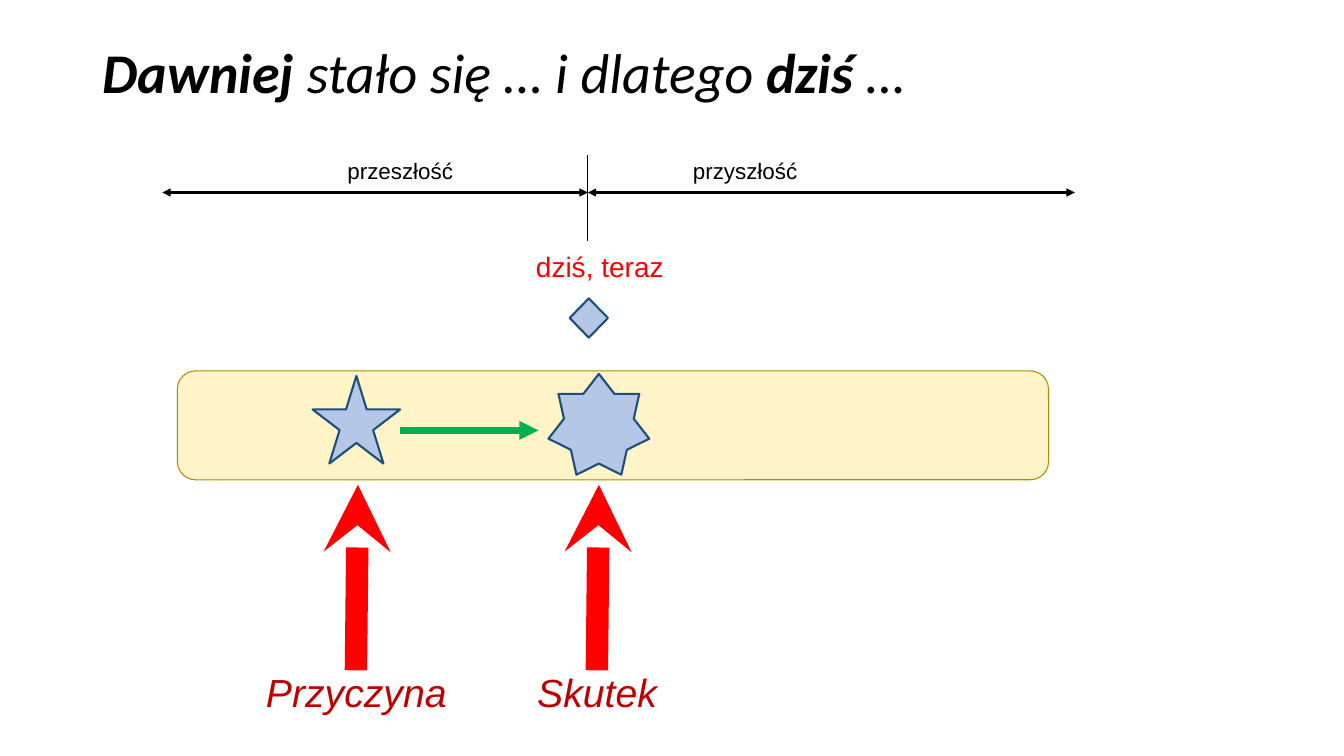
from dataclasses import dataclass

import lxml.etree
import pptx
import pptx.dml.color
import pptx.enum.shapes
import pptx.enum.text
import pptx.oxml.ns
import pptx.util

Inches = pptx.util.Inches
Pt = pptx.util.Pt
Kind = pptx.enum.shapes.MSO_SHAPE
Align = pptx.enum.text.PP_ALIGN
Anchor = pptx.enum.text.MSO_ANCHOR


@dataclass(frozen=True)
class Theme:
    black: str = "000000"
    red: str = "FF0000"
    dark_red: str = "C00000"
    green: str = "00B050"
    band_fill: str = "FFF4C7"
    band_line: str = "AD8B00"
    event_fill: str = "B4C7E7"
    event_line: str = "1F4E79"
    title_font: str = "Calibri"
    label_font: str = "Arial"
    title_size: int = 40
    role_size: int = 28
    now_size: int = 20
    period_size: int = 16


THEME = Theme()


@dataclass(frozen=True)
class Box:
    left: float
    top: float
    width: float
    height: float

    def lengths(self) -> tuple:
        return tuple(map(Inches, (self.left, self.top, self.width, self.height)))


@dataclass(frozen=True)
class Line:
    start: tuple[float, float]
    end: tuple[float, float]
    color: str
    width: float
    head: str = ""
    tail: str = ""


@dataclass(frozen=True)
class Figure:
    kind: Kind
    box: Box
    fill: str = THEME.event_fill
    line: str = THEME.event_line
    line_width: float = 1.5


@dataclass(frozen=True)
class Label:
    text: str
    box: Box
    size: int
    color: str
    italic: bool = False
    centered: bool = True
    inset: float = 0.03


NOW_X = 5.83
AXIS_Y = 1.91

FIGURES = [
    Figure(Kind.ROUNDED_RECTANGLE, Box(1.76, 3.68, 8.64, 1.08),
           THEME.band_fill, THEME.band_line, 0.75),
    Figure(Kind.STAR_5_POINT, Box(3.1, 3.73, 0.87, 0.87)),
    Figure(Kind.STAR_7_POINT, Box(5.44, 3.71, 1, 1)),
    Figure(Kind.DIAMOND, Box(5.65, 2.96, 0.38, 0.39)),
]

LINES = [
    Line((3.97, 4.27), (5.34, 4.27), THEME.green, 4.5, tail="triangle"),
    *(Line((x, 6.65), (x + 0.02, 4.81), THEME.red, 16, tail="stealth")
      for x in (3.53, 5.92)),
    *(Line((start, AXIS_Y), (end, AXIS_Y), THEME.black, 1.5, "triangle", "triangle")
      for start, end in ((1.61, NOW_X), (NOW_X, 10.66))),
    Line((NOW_X, 1.54), (NOW_X, 2.39), THEME.black, 0.5),
]

LABELS = [
    *(Label(text, Box(left, 6.58, 2.16, 0.57), THEME.role_size, THEME.dark_red,
            italic=True, centered=False, inset=0.1)
      for text, left in (("Przyczyna", 2.54), ("Skutek", 5.23))),
    Label("dziś, teraz", Box(5.23, 2.44, 1.44, 0.4), THEME.now_size, THEME.red),
    *(Label(text, Box(left, 1.52, 1.44, 0.34), THEME.period_size, THEME.black)
      for text, left in (("przeszłość", 3.25), ("przyszłość", 6.67))),
]


def rgb(color: str) -> pptx.dml.color.RGBColor:
    return pptx.dml.color.RGBColor.from_string(color)


def add_run(paragraph, text: str, *, font: str, size: int, color: str,
            bold: bool = False, italic: bool = False) -> None:
    run = paragraph.add_run()
    run.text = text
    run.font.name = font
    run.font.size = Pt(size)
    run.font.color.rgb = rgb(color)
    run.font.bold = bold
    run.font.italic = italic


def add_text_frame(slide, box: Box):
    text_frame = slide.shapes.add_textbox(*box.lengths()).text_frame
    text_frame.word_wrap = True
    return text_frame


def add_title(slide) -> None:
    paragraph = add_text_frame(slide, Box(0.92, 0.4, 11.5, 1.29)).paragraphs[0]
    paragraph.line_spacing = 0.9
    for text, bold in (("Dawniej", True), (" stało się … i dlatego ", False),
                       ("dziś ", True), ("…", False)):
        add_run(paragraph, text, font=THEME.title_font, size=THEME.title_size,
                color=THEME.black, bold=bold, italic=True)


def add_label(slide, label: Label) -> None:
    text_frame = add_text_frame(slide, label.box)
    text_frame.margin_left = text_frame.margin_right = Inches(label.inset)
    text_frame.margin_top = text_frame.margin_bottom = Inches(min(label.inset, 0.05))
    text_frame.vertical_anchor = Anchor.MIDDLE if label.centered else Anchor.TOP
    paragraph = text_frame.paragraphs[0]
    paragraph.alignment = Align.CENTER if label.centered else Align.LEFT
    add_run(paragraph, label.text, font=THEME.label_font, size=label.size,
            color=label.color, italic=label.italic)


def add_figure(slide, figure: Figure) -> None:
    shape = slide.shapes.add_shape(figure.kind, *figure.box.lengths())
    shape.shadow.inherit = False
    shape.fill.solid()
    shape.fill.fore_color.rgb = rgb(figure.fill)
    shape.line.color.rgb = rgb(figure.line)
    shape.line.width = Pt(figure.line_width)


def add_line(slide, line: Line) -> None:
    connector = slide.shapes.add_connector(
        pptx.enum.shapes.MSO_CONNECTOR.STRAIGHT,
        *map(Inches, (*line.start, *line.end)))
    connector.line.color.rgb = rgb(line.color)
    connector.line.width = Pt(line.width)
    outline = connector.line._get_or_add_ln()
    for tag, arrowhead in (("a:headEnd", line.head), ("a:tailEnd", line.tail)):
        if arrowhead:
            lxml.etree.SubElement(outline, pptx.oxml.ns.qn(tag), type=arrowhead)
    lxml.etree.SubElement(connector._element.spPr, pptx.oxml.ns.qn("a:effectLst"))


def main() -> None:
    presentation = pptx.Presentation()
    presentation.slide_width = Inches(13.33)
    presentation.slide_height = Inches(7.5)
    slide = presentation.slides.add_slide(presentation.slide_layouts[6])
    add_title(slide)
    for figure in FIGURES:
        add_figure(slide, figure)
    for line in LINES:
        add_line(slide, line)
    for label in LABELS:
        add_label(slide, label)
    presentation.save("out.pptx")


if __name__ == "__main__":
    main()
